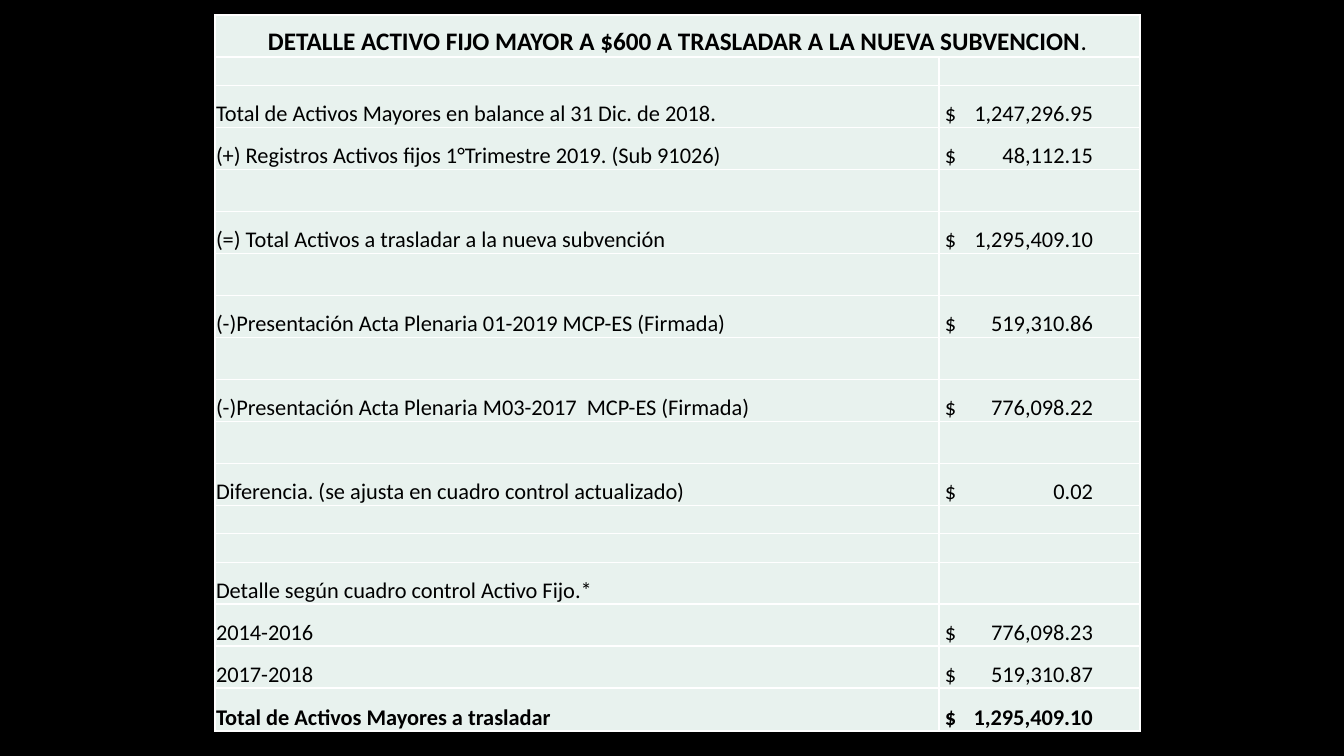
from lxml.etree import SubElement
from pptx import Presentation
from pptx.dml.color import RGBColor as Rgb
from pptx.enum.text import MSO_ANCHOR as Anchor, PP_ALIGN as Align
from pptx.oxml.ns import qn
from pptx.util import Pt

PX = 914400 / 100.8
COLORS = {"page": "000000", "cell": "E8F2EE", "text": "000000", "border": "FFFFFF"}
FONT = "Calibri"
TITLE = "DETALLE ACTIVO FIJO MAYOR A $600 A TRASLADAR A LA NUEVA SUBVENCION"
LABEL_WIDTH, AMOUNT_INDENT, AMOUNT_END = 724, 6, 148
THIN, NORMAL, LAST = 28, 42, 43

# Label, amount and height of each row below the title
ROWS = [
    ("", "", THIN),
    ("Total de Activos Mayores en balance al 31 Dic. de 2018.", "1,247,296.95", NORMAL),
    ("(+) Registros Activos fijos 1°Trimestre 2019. (Sub 91026)", "48,112.15", NORMAL),
    ("", "", NORMAL),
    ("(=) Total Activos a trasladar a la nueva subvención", "1,295,409.10", NORMAL),
    ("", "", NORMAL),
    ("(-)Presentación Acta Plenaria 01-2019 MCP-ES (Firmada)", "519,310.86", NORMAL),
    ("", "", NORMAL),
    ("(-)Presentación Acta Plenaria M03-2017  MCP-ES (Firmada)", "776,098.22", NORMAL),
    ("", "", NORMAL),
    ("Diferencia. (se ajusta en cuadro control actualizado)", "0.02", NORMAL),
    ("", "", THIN),
    ("", "", THIN),
    ("Detalle según cuadro control Activo Fijo.*", "", NORMAL),
    ("2014-2016", "776,098.23", NORMAL),
    ("2017-2018", "519,310.87", NORMAL),
    ("Total de Activos Mayores a trasladar", "1,295,409.10", LAST),
]


def px(length):
    return round(length * PX)


def add_borders(cell):
    props = cell._tc.get_or_add_tcPr()
    for index, side in enumerate(("lnL", "lnR", "lnT", "lnB")):
        line = props.makeelement(qn(f"a:{side}"), {"w": str(Pt(1))})
        fill = SubElement(line, qn("a:solidFill"))
        SubElement(fill, qn("a:srgbClr"), val=COLORS["border"])
        props.insert(index, line)  # borders come before the cell fill


def fill_cell(cell, text, size=16, bold=False, indent=1):
    cell.fill.solid()
    cell.fill.fore_color.rgb = Rgb.from_string(COLORS["cell"])
    add_borders(cell)
    cell.vertical_anchor = Anchor.BOTTOM
    cell.margin_left, cell.margin_right = px(indent), px(1)
    cell.margin_top, cell.margin_bottom = px(1), 0
    para = cell.text_frame.paragraphs[0]
    if not text:
        # Keeps an empty cell as low as its row
        SubElement(para._p, qn("a:endParaRPr"), sz=str(size * 100))
        return para
    para.text = text
    for span in para.runs:
        span.font.name, span.font.size, span.font.bold = FONT, Pt(size), bold
        span.font.color.rgb = Rgb.from_string(COLORS["text"])
    return para


def fill_amount(cell, amount, bold):
    para = fill_cell(cell, f"$\t{amount}" if amount else "", bold=bold, indent=AMOUNT_INDENT)
    if amount:
        # Right tab lines up the figures
        tabs = SubElement(para._p.get_or_add_pPr(), qn("a:tabLst"))
        SubElement(tabs, qn("a:tab"), pos=str(px(AMOUNT_END)), algn="r")


def add_asset_table(page, left, top, width, height):
    frame = page.shapes.add_table(len(ROWS) + 1, 2, px(left), px(top), px(width), px(height))
    table = frame.table
    table.columns[0].width = px(LABEL_WIDTH)
    table.columns[1].width = px(width - LABEL_WIDTH)

    # Title across both columns
    table.rows[0].height = px(NORMAL)
    title = table.cell(0, 0)
    title.merge(table.cell(0, 1))
    para = fill_cell(title, TITLE, size=18, bold=True)
    para.alignment = Align.CENTER
    stop = para.add_run()
    stop.text = "."
    stop.font.name, stop.font.size, stop.font.bold = FONT, Pt(18), False
    stop.font.color.rgb = Rgb.from_string(COLORS["text"])

    # Balance rows, with the final total in bold
    for index, (label, amount, row_height) in enumerate(ROWS, start=1):
        table.rows[index].height = px(row_height)
        bold = index == len(ROWS)
        fill_cell(table.cell(index, 0), label, bold=bold)
        fill_amount(table.cell(index, 1), amount, bold)


def main():
    deck = Presentation()
    deck.slide_width, deck.slide_height = px(1344), px(756)
    page = deck.slides.add_slide(deck.slide_layouts[6])
    page.background.fill.solid()
    page.background.fill.fore_color.rgb = Rgb.from_string(COLORS["page"])
    add_asset_table(page, 215, 15, 925, 715)
    deck.save("out.pptx")


if __name__ == "__main__":
    main()
